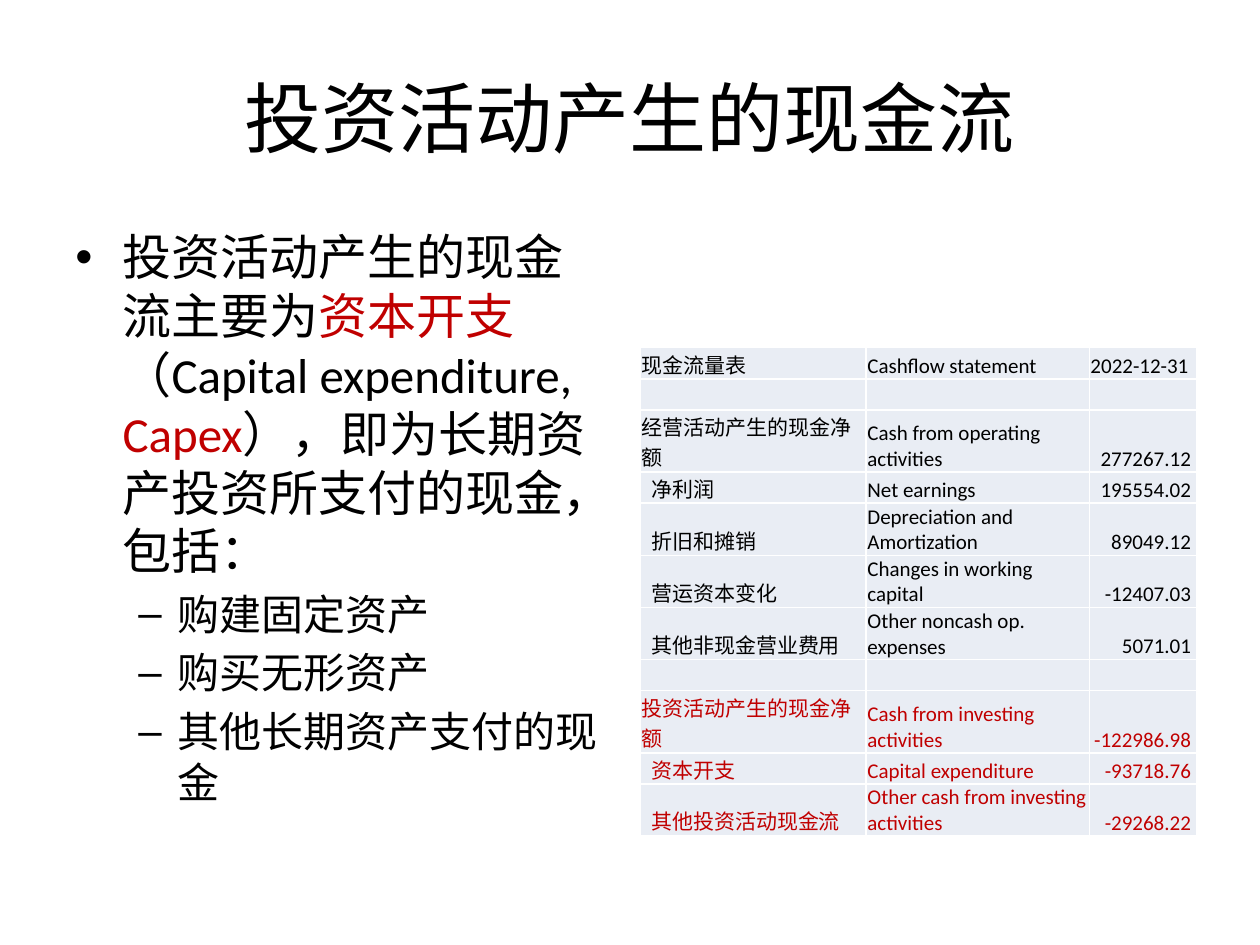
from pptx import Presentation
from pptx.dml.color import RGBColor
from pptx.enum.text import MSO_ANCHOR, PP_ALIGN
from pptx.util import Pt
from lxml.etree import SubElement
from pptx.oxml.ns import qn

BLACK, RED, CELL = "000000", "C00000", "E9EDF4"

TITLE = "投资活动产生的现金流"

# Bullet paragraphs: (level, [(text, colour), ...])
BULLETS = [
    (0, [("投资活动产生的现金流主要为", BLACK), ("资本开支", RED),
         ("（Capital expenditure, ", BLACK), ("Capex", RED),
         ("），即为长期资产投资所支付的现金，包括：", BLACK)]),
    (1, [("购建固定资产", BLACK)]),
    (1, [("购买无形资产", BLACK)]),
    (1, [("其他长期资产支付的现金", BLACK)]),
]
# Per level: bullet, size, left margin, hanging indent
LEVELS = [("•", 28, 27, -27), ("–", 24, 58.5, -22.5)]

# Row heights: one line, two English lines, two Chinese lines
ONE, TWO, TWO_TALL = 17.8, 29.8, 35.5
# Table rows: (indented, colour, row height, texts)
ROWS = [
    (False, BLACK, ONE, ("现金流量表", "Cashflow statement", "2022-12-31")),
    (False, BLACK, ONE, ("", "", "")),
    (False, BLACK, TWO_TALL, ("经营活动产生的现金净额", "Cash from operating activities", "277267.12")),
    (True, BLACK, ONE, ("净利润", "Net earnings", "195554.02")),
    (True, BLACK, TWO, ("折旧和摊销", "Depreciation and Amortization", "89049.12")),
    (True, BLACK, TWO, ("营运资本变化", "Changes in working capital", "-12407.03")),
    (True, BLACK, TWO, ("其他非现金营业费用", "Other noncash op. expenses", "5071.01")),
    (False, BLACK, ONE, ("", "", "")),
    (False, RED, TWO_TALL, ("投资活动产生的现金净额", "Cash from investing activities", "-122986.98")),
    (True, RED, ONE, ("资本开支", "Capital expenditure", "-93718.76")),
    (True, RED, TWO, ("其他投资活动现金流", "Other cash from investing activities", "-29268.22")),
]
COL_WIDTHS = [129, 127.5, 61.5]
INSET, INDENT, NUMBER_GAP = 0.7, 5.4, 2.7


def rgb(value):
    return RGBColor.from_string(value)


def add_run(p, text, size, color):
    r = p.add_run()
    r.text = text
    r.font.name = "Calibri"
    r.font.size = Pt(size)
    r.font.color.rgb = rgb(color)


def add_text_frame(slide, left, top, width, height, anchor):
    s = slide.shapes.add_textbox(Pt(left), Pt(top), Pt(width), Pt(height))
    tf = s.text_frame
    tf.word_wrap = True
    tf.vertical_anchor = anchor
    return tf


def add_bullet(p, char, left, indent):
    pPr = p._p.get_or_add_pPr()
    pPr.set("marL", str(Pt(left)))
    pPr.set("indent", str(Pt(indent)))
    SubElement(pPr, qn("a:buFont"), typeface="Arial")
    SubElement(pPr, qn("a:buChar"), char=char)


def fill_cell(cell, text, color, indented, is_number):
    cell.fill.solid()
    cell.fill.fore_color.rgb = rgb(CELL)
    cell.vertical_anchor = MSO_ANCHOR.BOTTOM
    cell.margin_left = Pt(INSET + (INDENT if indented else 0))
    cell.margin_right = Pt(INSET + (NUMBER_GAP if is_number else 0))
    cell.margin_top, cell.margin_bottom = Pt(INSET), Pt(0)
    p = cell.text_frame.paragraphs[0]
    if is_number:
        p.alignment = PP_ALIGN.RIGHT
    if text:
        add_run(p, text, 12, color)
    else:
        # Keeps an empty row as low as a line of text
        SubElement(p._p, qn("a:endParaRPr"), sz="1200")


prs = Presentation()
prs.slide_width, prs.slide_height = Pt(720), Pt(540)
slide = prs.slides.add_slide(prs.slide_layouts[6])

# Title
p = add_text_frame(slide, 36, 21.6, 648, 90, MSO_ANCHOR.MIDDLE).paragraphs[0]
p.alignment = PP_ALIGN.CENTER
add_run(p, TITLE, 44, BLACK)

# Bullets
tf = add_text_frame(slide, 36, 126, 318, 356.4, MSO_ANCHOR.TOP)
for i, (level, runs) in enumerate(BULLETS):
    char, size, left, indent = LEVELS[level]
    p = tf.add_paragraph() if i else tf.paragraphs[0]
    p.level = level
    if i:
        p.space_before = Pt(size * 0.2)
    add_bullet(p, char, left, indent)
    for text, color in runs:
        add_run(p, text, size, color)

# Cash flow table
height = sum(row[2] for row in ROWS)
table = slide.shapes.add_table(len(ROWS), len(COL_WIDTHS), Pt(366), Pt(198.7),
                               Pt(sum(COL_WIDTHS)), Pt(height)).table
table.first_row = table.horz_banding = False
for column, width in zip(table.columns, COL_WIDTHS):
    column.width = Pt(width)
for i, (indented, color, row_height, texts) in enumerate(ROWS):
    table.rows[i].height = Pt(row_height)
    for j, text in enumerate(texts):
        fill_cell(table.cell(i, j), text, color, indented and j == 0, j == 2 and i > 0)

prs.save("out.pptx")
